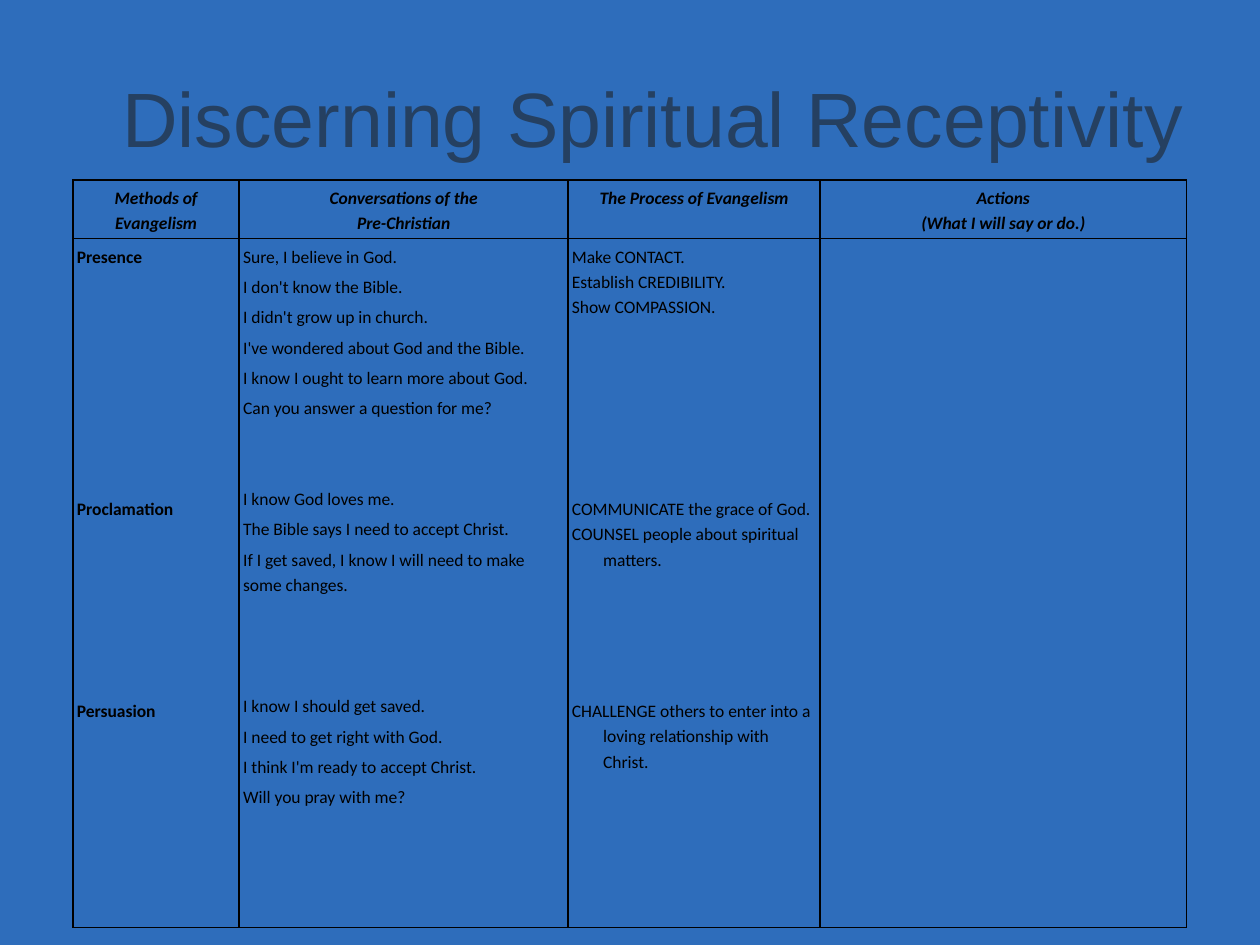
from collections import namedtuple

from lxml import etree
from pptx import Presentation
from pptx.dml.color import RGBColor
from pptx.enum.text import MSO_ANCHOR, MSO_AUTO_SIZE, PP_ALIGN
from pptx.oxml.ns import qn
from pptx.util import Cm, Pt

LEFT, CENTER, RIGHT = PP_ALIGN.LEFT, PP_ALIGN.CENTER, PP_ALIGN.RIGHT
MIDDLE = MSO_ANCHOR.MIDDLE
NO_AUTOFIT = MSO_AUTO_SIZE.NONE

BLUE = RGBColor(0x2E, 0x6D, 0xBB)
NAVY = RGBColor(0x25, 0x40, 0x61)
BLACK = RGBColor(0x00, 0x00, 0x00)

Box = namedtuple("Box", "left top width height")
TITLE_BOX = Box(Cm(1.27), Cm(0.76), Cm(22.86), Cm(3.18))
TABLE_BOX = Box(Cm(1.47), Cm(3.63), Cm(22.45), Cm(15.06))

COLUMN_SHARES = (1.32, 2.61, 2, 2.91)
HEADER_HEIGHT = Cm(1.17)
CELL_INSET = Cm(0.08)
HANGING = Cm(0.63)
LINE_SPACING = 1.19
LINE_PITCH = 14.43
PHRASE_GAP = 2.9

HEADERS = (
    ("Methods of Evangelism",),
    ("Conversations of the", "Pre-Christian"),
    ("The Process of Evangelism",),
    ("Actions", "(What I will say or do.)"),
)
METHODS = (("Presence",), ("Proclamation",), ("Persuasion",))
CONVERSATIONS = (
    (
        "Sure, I believe in God.",
        "I don't know the Bible.",
        "I didn't grow up in church.",
        "I've wondered about God and the Bible.",
        "I know I ought to learn more about God.",
        "Can you answer a question for me?",
    ),
    (
        "I know God loves me.",
        "The Bible says I need to accept Christ.",
        "If I get saved, I know I will need to make some changes.",
    ),
    (
        "I know I should get saved.",
        "I need to get right with God.",
        "I think I'm ready to accept Christ.",
        "Will you pray with me?",
    ),
)
PROCESS = (
    ("Make CONTACT.", "Establish CREDIBILITY.", "Show COMPASSION."),
    ("COMMUNICATE the grace of God.", "COUNSEL people about spiritual matters."),
    ("CHALLENGE others to enter into a loving relationship with Christ.",),
)


def write_para(frame, text, size=10, font="Calibri", color=BLACK, bold=False,
               italic=False, align=LEFT, spacing=LINE_SPACING, before=0, after=0,
               hanging=0):
    """Add one formatted paragraph, using the frame's first one if it is empty."""
    para = frame.paragraphs[0]
    if para.runs:
        para = frame.add_paragraph()
    para.alignment = align
    para.line_spacing = spacing
    para.space_before = Pt(before)
    para.space_after = Pt(after)
    if hanging:
        properties = para._p.get_or_add_pPr()
        properties.set("marL", str(hanging))
        properties.set("indent", str(-hanging))
    span = para.add_run()
    span.text = text
    span.font.name = font
    span.font.size = Pt(size)
    span.font.bold = bold
    span.font.italic = italic
    span.font.color.rgb = color


def write_groups(cell, groups, blank_lines, after=0, **style):
    """Write groups of lines, with a gap of some blank lines before each group."""
    for group, blanks in zip(groups, blank_lines):
        gap = round(blanks * (LINE_PITCH + after), 1)
        for index, text in enumerate(group):
            write_para(cell.text_frame, text, before=0 if index else gap,
                       after=after, **style)


def format_cell(cell):
    """Give a cell no fill, narrow margins and a black border on every side."""
    cell.fill.background()
    cell.margin_left = cell.margin_right = CELL_INSET
    cell.margin_top = cell.margin_bottom = CELL_INSET
    properties = cell._tc.get_or_add_tcPr()
    for index, side in enumerate(("lnL", "lnR", "lnT", "lnB")):
        line = etree.Element(qn(f"a:{side}"), w=str(Pt(1)))
        fill = etree.SubElement(line, qn("a:solidFill"))
        etree.SubElement(fill, qn("a:srgbClr"), val=str(BLACK))
        properties.insert(index, line)


def place_title(page, box):
    """Fill the title placeholder and move it to the box."""
    title = page.shapes.title
    title.left, title.top, title.width, title.height = box
    frame = title.text_frame
    frame.auto_size = NO_AUTOFIT
    frame.vertical_anchor = MIDDLE
    write_para(frame, "Discerning Spiritual Receptivity", size=44, font="Arial",
               color=NAVY, align=RIGHT, spacing=1.0)


def place_table(page, box):
    """Build the table of evangelism methods in the box."""
    table = page.shapes.add_table(2, len(COLUMN_SHARES), *box).table
    table.first_row = table.horz_banding = False
    for column, share in zip(table.columns, COLUMN_SHARES):
        column.width = int(box.width * share / sum(COLUMN_SHARES))
    table.rows[0].height = HEADER_HEIGHT
    table.rows[1].height = box.height - HEADER_HEIGHT
    for cell in table.iter_cells():
        format_cell(cell)
    for index, lines in enumerate(HEADERS):
        write_groups(table.cell(0, index), [lines], [0], bold=True, italic=True,
                     align=CENTER)
    write_groups(table.cell(1, 0), METHODS, (0, 9, 7), bold=True)
    write_groups(table.cell(1, 1), CONVERSATIONS, (0, 2, 3), after=PHRASE_GAP)
    write_groups(table.cell(1, 2), PROCESS, (0, 7, 5), hanging=HANGING)


def main():
    """Build the slide and save it."""
    deck = Presentation()
    deck.slide_width, deck.slide_height = Cm(25.4), Cm(19.05)
    page = deck.slides.add_slide(deck.slide_layouts[5])
    page.background.fill.solid()
    page.background.fill.fore_color.rgb = BLUE
    place_title(page, TITLE_BOX)
    place_table(page, TABLE_BOX)
    deck.save("out.pptx")


if __name__ == "__main__":
    main()
